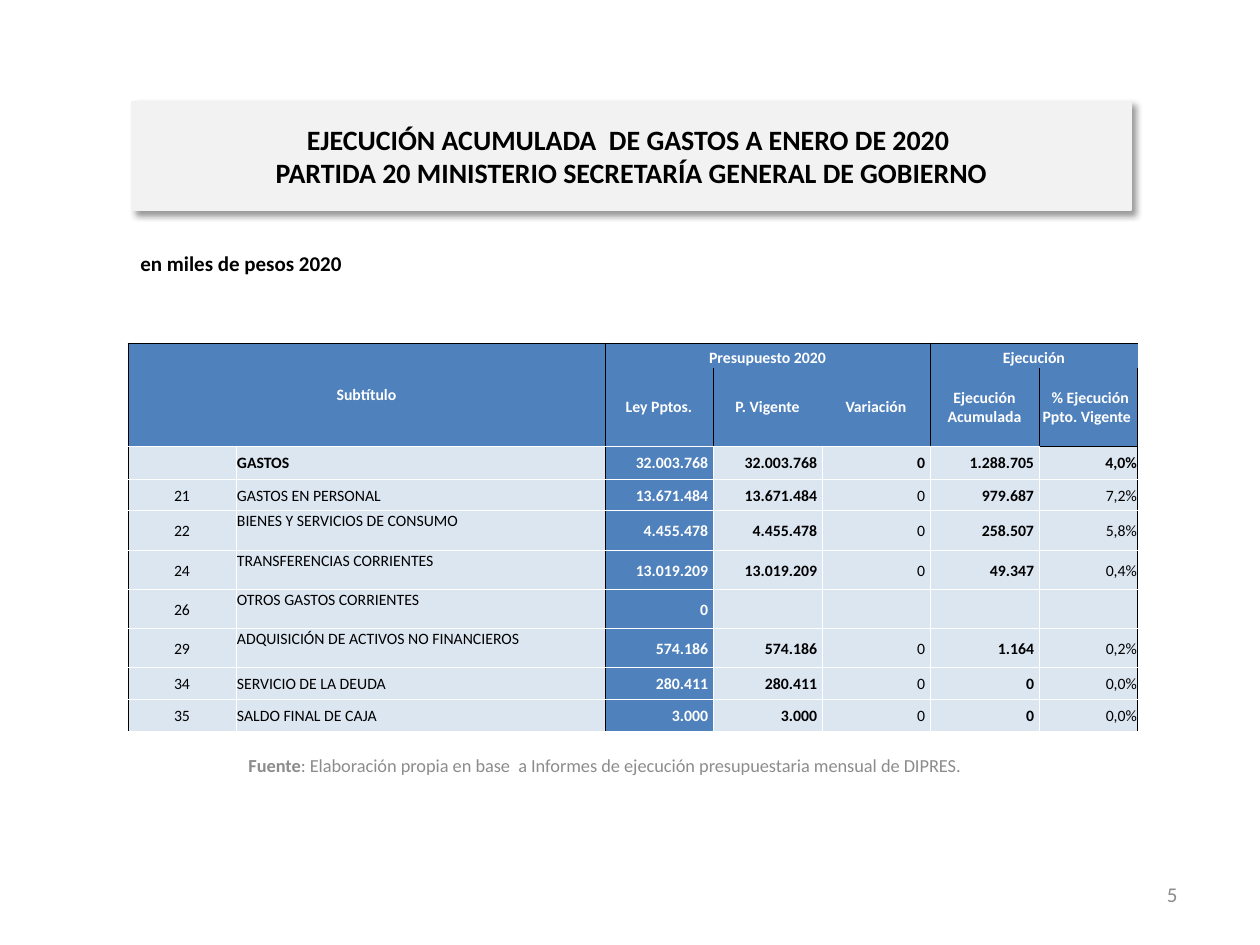
from pptx import Presentation
from pptx.dml.color import RGBColor
from pptx.enum.text import MSO_ANCHOR as Anchor, MSO_AUTO_SIZE as AutoSize, PP_ALIGN as Align
from pptx.oxml import parse_xml
from pptx.oxml.ns import nsdecls
from pptx.util import Pt

PX = 914400 // 126
FONT = "Calibri"
BLACK, WHITE, GREY = "000000", "FFFFFF", "8C8C8C"
BLUE, PALE, PANEL = "4F81BD", "DCE6F1", "F2F2F2"
NO_GRID_STYLE = "{2D5ABB26-0587-4C30-8999-92F81FD0307C}"

COLUMN_WIDTHS = [108, 369, 108, 109, 108, 109, 99]
ROW_HEIGHTS = [25, 78, 34, 31, 40, 39, 39, 39, 32, 31]
TALL_ROW = 39
HEADERS = [
    ["Subtítulo", "", "Presupuesto 2020", "", "", "Ejecución", ""],
    ["", "", "Ley Pptos.", "P. Vigente", "Variación", "Ejecución Acumulada",
     " % Ejecución Ppto. Vigente "],
]
EXPENSES = [
    ["", "GASTOS", "32.003.768", "32.003.768", "0", "1.288.705", "4,0%"],
    ["21", "GASTOS EN PERSONAL", "13.671.484", "13.671.484", "0", "979.687", "7,2%"],
    ["22", "BIENES Y SERVICIOS DE CONSUMO", "4.455.478", "4.455.478", "0", "258.507", "5,8%"],
    ["24", "TRANSFERENCIAS CORRIENTES", "13.019.209", "13.019.209", "0", "49.347", "0,4%"],
    ["26", "OTROS GASTOS CORRIENTES", "0", "", "", "", ""],
    ["29", "ADQUISICIÓN DE ACTIVOS NO FINANCIEROS", "574.186", "574.186", "0", "1.164", "0,2%"],
    ["34", "SERVICIO DE LA DEUDA", "280.411", "280.411", "0", "0", "0,0%"],
    ["35", "SALDO FINAL DE CAJA", "3.000", "3.000", "0", "0", "0,0%"],
]
MERGES = [((0, 0), (1, 1)), ((0, 2), (0, 4)), ((0, 5), (0, 6))]


def rgb(color):
    return RGBColor.from_string(color)


def px(*lengths):
    return [length * PX for length in lengths]


def format_run(run, size, color, bold):
    run.font.name = FONT
    run.font.size = Pt(size)
    run.font.bold = bold
    run.font.color.rgb = rgb(color)


def add_title(slide, text, box):
    title = slide.shapes.title
    title.left, title.top, title.width, title.height = px(*box)
    title.fill.solid()
    title.fill.fore_color.rgb = rgb(PANEL)
    title.line.color.rgb = rgb(PANEL)
    title.line.width = Pt(0.75)
    title._element.spPr.append(parse_xml(
        f'<a:effectLst {nsdecls("a")}><a:outerShdw blurRad="{Pt(4)}" dist="{Pt(3)}" '
        f'dir="2700000" algn="tl" rotWithShape="0"><a:srgbClr val="{BLACK}">'
        '<a:alpha val="40000"/></a:srgbClr></a:outerShdw></a:effectLst>'))
    frame = title.text_frame
    frame.text = text
    frame.auto_size = AutoSize.NONE
    frame.vertical_anchor = Anchor.MIDDLE
    paragraph = frame.paragraphs[0]
    paragraph.alignment = Align.CENTER
    for run in paragraph.runs:
        format_run(run, 16, BLACK, True)


def add_text(slide, parts, box, size, color, align, anchor=Anchor.MIDDLE):
    frame = slide.shapes.add_textbox(*px(*box)).text_frame
    frame.word_wrap = True
    frame.vertical_anchor = anchor
    paragraph = frame.paragraphs[0]
    paragraph.alignment = align
    for text, bold in parts:
        run = paragraph.add_run()
        run.text = text
        format_run(run, size, color, bold)


def border_colors(row, column):
    header = row < 2
    inner = None if header else WHITE
    last_header = row == 1 and column == 6
    below_last_header = row == 2 and column == 6
    return {
        "L": BLACK if column in (0, 2) or header and column == 5 else inner,
        "R": BLACK if column in (1, 6) or header and column == 4 else inner,
        "T": BLACK if row == 0 or below_last_header else inner,
        "B": BLACK if last_header else WHITE if 0 < row < len(ROW_HEIGHTS) - 1 else None,
    }


def set_borders(cell, colors):
    properties = cell._tc.get_or_add_tcPr()
    for side, color in colors.items():
        if color:
            properties.append(parse_xml(
                f'<a:ln{side} {nsdecls("a")} w="{Pt(0.5)}"><a:solidFill>'
                f'<a:srgbClr val="{color}"/></a:solidFill></a:ln{side}>'))


def cell_format(row, column):
    if row < 2:
        return Align.CENTER, Anchor.BOTTOM if row == 0 and column else Anchor.MIDDLE, WHITE, True
    align = [Align.CENTER, Align.JUSTIFY][column] if column < 2 else Align.RIGHT
    top = column == 1 and ROW_HEIGHTS[row] >= TALL_ROW
    color = WHITE if column == 2 else BLACK
    return align, Anchor.TOP if top else Anchor.MIDDLE, color, row == 2 or column in (2, 3, 5)


def fill_cell(cell, text, row, column):
    align, anchor, color, bold = cell_format(row, column)
    set_borders(cell, border_colors(row, column))
    cell.fill.solid()
    cell.fill.fore_color.rgb = rgb(BLUE if row < 2 or column == 2 else PALE)
    cell.margin_left = cell.margin_top = cell.margin_right = PX
    cell.margin_bottom = 0
    if row >= 2 and 2 <= column <= 5:
        cell.margin_right = 5 * PX
    cell.vertical_anchor = anchor
    paragraph = cell.text_frame.paragraphs[0]
    paragraph.alignment = align
    if text:
        paragraph.text = text
        format_run(paragraph.runs[0], 9, color, bold)
    else:
        paragraph._p.append(parse_xml(f'<a:endParaRPr {nsdecls("a")} sz="900"/>'))


def add_expense_table(slide, left, top):
    values = HEADERS + EXPENSES
    frame = slide.shapes.add_table(
        len(values), len(COLUMN_WIDTHS),
        *px(left, top, sum(COLUMN_WIDTHS), sum(ROW_HEIGHTS)))
    table = frame.table
    table.first_row = table.horz_banding = False
    table._tbl.tblPr.find("{*}tableStyleId").text = NO_GRID_STYLE
    for column, width in zip(table.columns, COLUMN_WIDTHS):
        column.width = width * PX
    for row, height in zip(table.rows, ROW_HEIGHTS):
        row.height = height * PX
    for row, texts in enumerate(values):
        for column, text in enumerate(texts):
            fill_cell(table.cell(row, column), text, row, column)
    for first, last in MERGES:
        table.cell(*first).merge(table.cell(*last))


def main():
    presentation = Presentation()
    presentation.slide_width, presentation.slide_height = px(1260, 945)
    slide = presentation.slides.add_slide(presentation.slide_layouts[5])
    add_title(slide, "EJECUCIÓN ACUMULADA  DE GASTOS A ENERO DE 2020 \v"
                     "PARTIDA 20 MINISTERIO SECRETARÍA GENERAL DE GOBIERNO",
              (132, 102, 999, 108))
    add_text(slide, [("Fuente", True),
                     (": Elaboración propia en base  a Informes de ejecución "
                      "presupuestaria mensual de DIPRES.", False)],
             (109, 740, 992, 51), 10.5, GREY, Align.CENTER)
    add_text(slide, [("5", False)], (897, 869, 293, 51), 12, GREY, Align.RIGHT)
    add_text(slide, [("en miles de pesos 2020", True)],
             (128, 244, 998, 39), 12, BLACK, Align.LEFT, Anchor.TOP)
    add_expense_table(slide, 128, 343)
    presentation.save("out.pptx")


if __name__ == "__main__":
    main()
